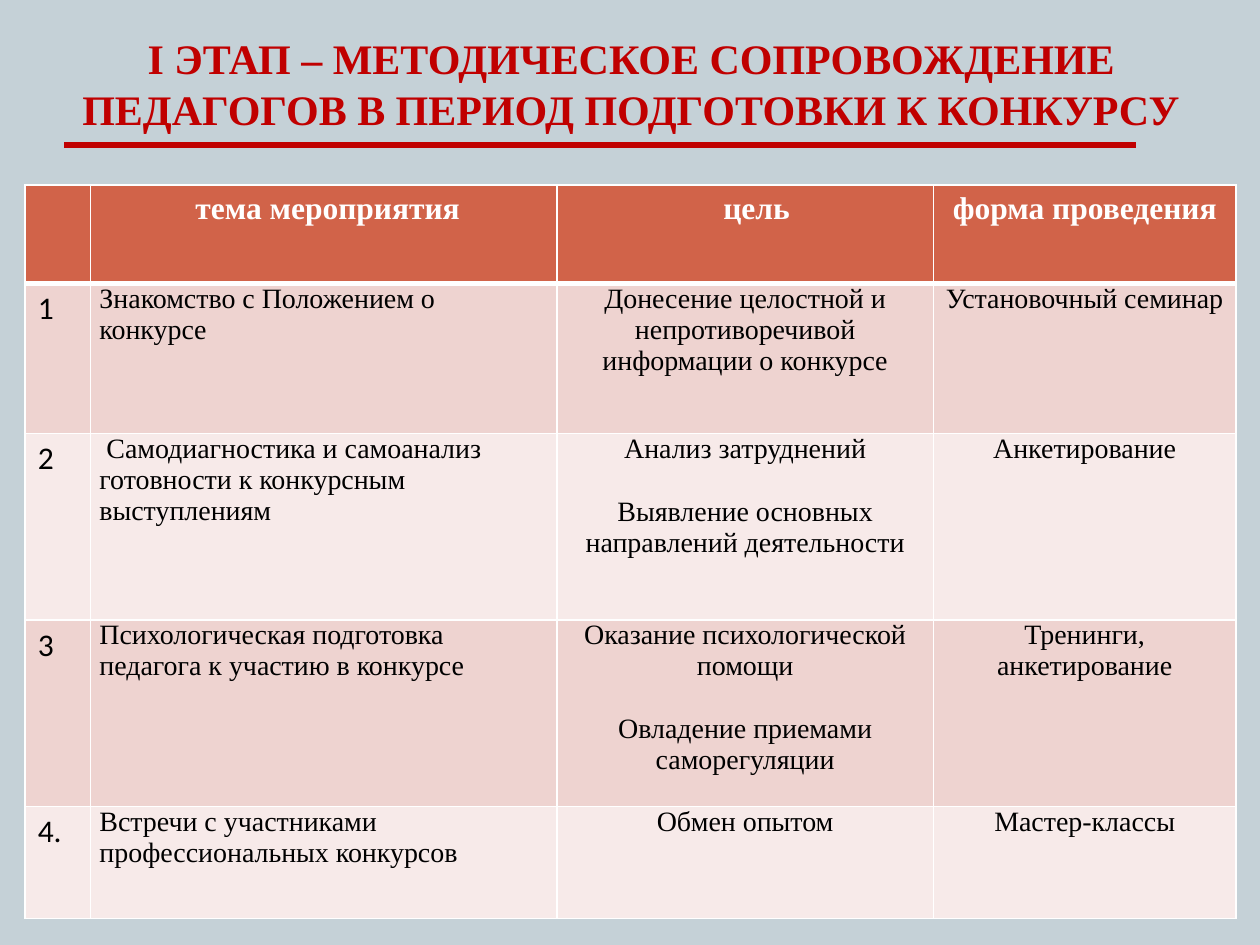
from lxml import etree
from pptx import Presentation
from pptx import util as u
from pptx.dml.color import RGBColor
from pptx.enum import shapes, text
from pptx.oxml.ns import qn

SERIF, SANS = "Times New Roman", "Calibri"
RED, WHITE, BLACK = "C00000", "FFFFFF", "000000"
HEADER_FILL = "D16349"
BAND_FILLS = ["EED3D0", "F7EAE9"]
LEFT, CENTER = text.PP_ALIGN.LEFT, text.PP_ALIGN.CENTER

COLUMN_WIDTHS = [0.52, 3.7, 2.99, 2.4]
ROW_HEIGHTS = [0.78, 1.19, 1.48, 1.48, 0.89]
HEADERS = ["", " тема мероприятия", "цель", "форма проведения"]
# Each row: number, topic, goals (one paragraph each), form
EVENTS = [
    ("1", "Знакомство с Положением о конкурсе",
     ["Донесение целостной и непротиворечивой информации о конкурсе"],
     "Установочный семинар"),
    ("2", " Самодиагностика и самоанализ готовности к конкурсным выступлениям",
     ["Анализ затруднений", "Выявление основных направлений деятельности"],
     "Анкетирование"),
    ("3", "Психологическая подготовка педагога к участию в конкурсе",
     ["Оказание психологической помощи", "Овладение приемами саморегуляции"],
     "Тренинги, анкетирование"),
    ("4.", "Встречи с участниками профессиональных конкурсов",
     ["Обмен опытом"], "Мастер-классы"),
]


def color(value):
    return RGBColor.from_string(value)


def write(frame, paragraphs, size=16, font=SERIF, fill=BLACK, bold=False,
          align=LEFT, gap=0):
    """Write the paragraphs in one format, with a gap in points between them."""
    frame.word_wrap = True
    for index, words in enumerate(paragraphs):
        paragraph = frame.add_paragraph() if index else frame.paragraphs[0]
        paragraph.alignment = align
        paragraph.space_before = u.Pt(gap if index else 0)
        run = paragraph.add_run()
        run.text = words
        run.font.size = u.Pt(size)
        run.font.name = font
        run.font.bold = bold
        run.font.color.rgb = color(fill)


def set_borders(cell, widths):
    """Draw white borders; widths are points for left, right, top, bottom."""
    properties = cell._tc.get_or_add_tcPr()
    for index, (side, width) in enumerate(zip("LRTB", widths)):
        line = etree.Element(qn(f"a:ln{side}"), w=str(u.Pt(width)))
        solid = etree.SubElement(line, qn("a:solidFill"))
        etree.SubElement(solid, qn("a:srgbClr"), val=WHITE)
        properties.insert(index, line)


def add_title(slide, left, top, width, height):
    title = slide.shapes.title
    title.left, title.top = u.Inches(left), u.Inches(top)
    title.width, title.height = u.Inches(width), u.Inches(height)
    frame = title.text_frame
    frame.auto_size = text.MSO_AUTO_SIZE.NONE
    frame.vertical_anchor = text.MSO_ANCHOR.MIDDLE
    write(frame, ["I ЭТАП – МЕТОДИЧЕСКОЕ СОПРОВОЖДЕНИЕ ПЕДАГОГОВ "
                  "В ПЕРИОД ПОДГОТОВКИ К КОНКУРСУ"],
          size=24, fill=RED, bold=True, align=CENTER)


def add_rule(slide, left, top, width):
    y = u.Inches(top)
    rule = slide.shapes.add_connector(
        shapes.MSO_CONNECTOR.STRAIGHT, u.Inches(left), y, u.Inches(left + width), y)
    rule.line.color.rgb = color(RED)
    rule.line.width = u.Pt(3)
    etree.SubElement(rule._element.spPr, qn("a:effectLst"))


def add_events_table(slide, left, top, width, height):
    table = slide.shapes.add_table(
        len(ROW_HEIGHTS), len(COLUMN_WIDTHS), u.Inches(left), u.Inches(top),
        u.Inches(width), u.Inches(height)).table
    for column, share in zip(table.columns, COLUMN_WIDTHS):
        column.width = u.Inches(width * share / sum(COLUMN_WIDTHS))
    for row, share in zip(table.rows, ROW_HEIGHTS):
        row.height = u.Inches(height * share / sum(ROW_HEIGHTS))

    # Header row
    for column, words in enumerate(HEADERS):
        cell = table.cell(0, column)
        if words:
            write(cell.text_frame, [words], size=18, fill=WHITE, bold=True,
                  align=CENTER)
        style_cell(cell, HEADER_FILL, (1, 1, 1, 3))
    table.cell(0, 2).margin_left = u.Inches(0.28)

    # Numbered events
    for row, (number, topic, goals, form) in enumerate(EVENTS, start=1):
        top_border = 3 if row == 1 else 1
        for column, paragraphs in enumerate([[number], [topic], goals, [form]]):
            cell = table.cell(row, column)
            if column == 0:
                write(cell.text_frame, paragraphs, size=18, font=SANS)
            else:
                cell.margin_left = cell.margin_right = u.Inches(0.07)
                cell.margin_top = cell.margin_bottom = 0
                write(cell.text_frame, paragraphs, gap=18,
                      align=LEFT if column == 1 else CENTER)
            style_cell(cell, BAND_FILLS[(row - 1) % 2], (1, 1, top_border, 1))


def style_cell(cell, fill, border_widths):
    cell.fill.solid()
    cell.fill.fore_color.rgb = color(fill)
    set_borders(cell, border_widths)


def main():
    presentation = Presentation()
    presentation.slide_width = u.Inches(10)
    presentation.slide_height = u.Inches(7.5)
    slide = presentation.slides.add_slide(presentation.slide_layouts[5])
    slide.background.fill.solid()
    slide.background.fill.fore_color.rgb = color("C5D1D7")

    add_title(slide, 0.51, 0.26, 9, 0.8)
    add_events_table(slide, 0.2, 1.47, 9.61, 5.82)
    add_rule(slide, 0.51, 1.15, 8.51)
    presentation.save("out.pptx")


if __name__ == "__main__":
    main()
